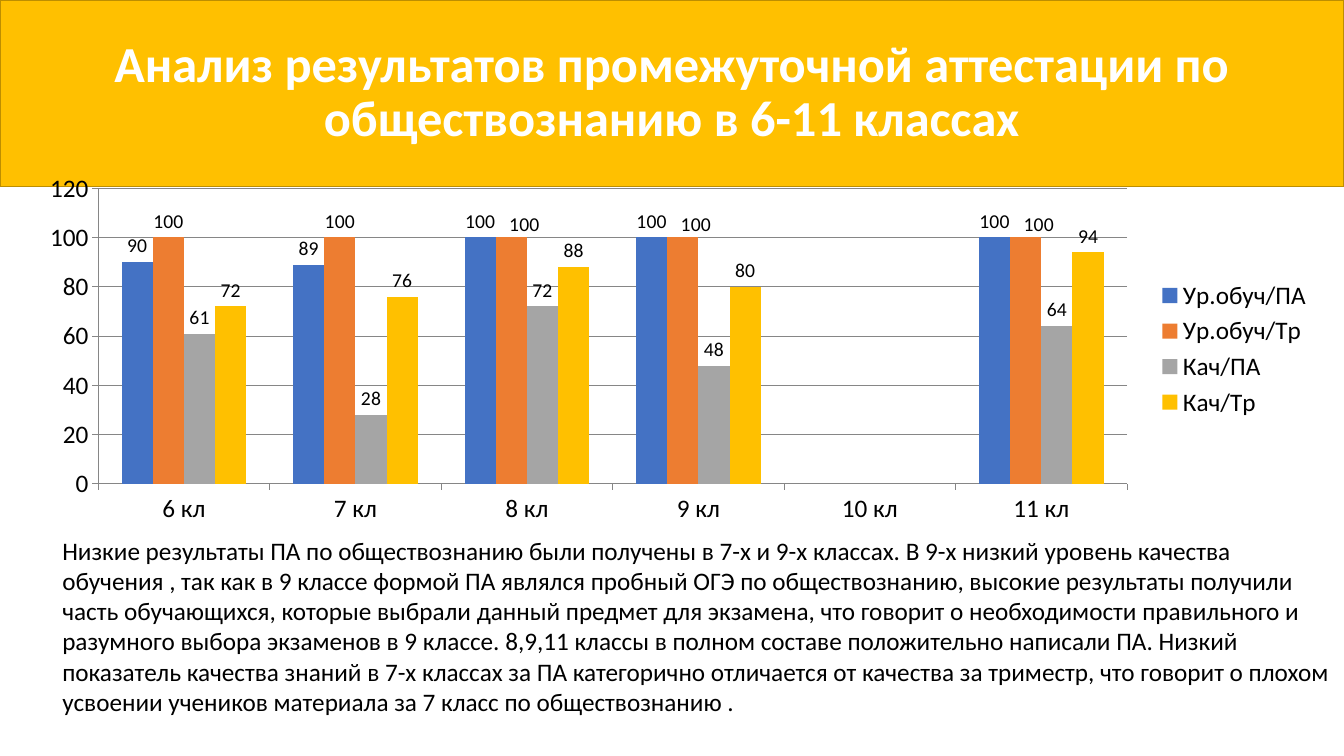
from lxml.etree import SubElement
from pptx import Presentation
from pptx.chart.data import CategoryChartData
from pptx.dml.color import RGBColor
from pptx.enum.chart import XL_CHART_TYPE, XL_LABEL_POSITION, XL_LEGEND_POSITION, XL_TICK_MARK
from pptx.enum.shapes import MSO_SHAPE
from pptx.enum.text import MSO_ANCHOR, PP_ALIGN
from pptx.oxml.ns import qn
from pptx.util import Inches, Pt

WIDE, HIGH = 13.33, 7.5
FACE = "Calibri"
BLACK = RGBColor(0x00, 0x00, 0x00)
WHITE = RGBColor(0xFF, 0xFF, 0xFF)
GOLD = RGBColor(0xFF, 0xC0, 0x00)
EDGE = RGBColor(0xBD, 0x8E, 0x00)
BLUE = RGBColor(0x44, 0x72, 0xC4)
ORANGE = RGBColor(0xED, 0x7D, 0x31)
GREY = RGBColor(0xA5, 0xA5, 0xA5)
RULE = RGBColor(0x86, 0x86, 0x86)

TITLE = "Анализ результатов промежуточной аттестации по обществознанию в 6-11 классах"
NOTE = (
    "Низкие результаты ПА по обществознанию были получены в 7-х и 9-х классах. "
    "В 9-х низкий уровень качества обучения , так как в 9 классе формой ПА являлся "
    "пробный ОГЭ по обществознанию, высокие результаты получили часть обучающихся, "
    "которые выбрали данный предмет для экзамена, что говорит о необходимости "
    "правильного и разумного выбора экзаменов в 9 классе. 8,9,11 классы в полном "
    "составе положительно написали ПА. Низкий показатель качества знаний в 7-х классах "
    "за ПА категорично отличается от качества за триместр, что говорит о плохом "
    "усвоении учеников материала за 7 класс по обществознанию ."
)
GRADES = [f"{grade} кл" for grade in range(6, 12)]
MARKS = [
    ("Ур.обуч/ПА", BLUE, (90, 89, 100, 100, None, 100)),
    ("Ур.обуч/Тр", ORANGE, (100, 100, 100, 100, None, 100)),
    ("Кач/ПА", GREY, (61, 28, 72, 48, None, 64)),
    ("Кач/Тр", GOLD, (72, 76, 88, 80, None, 94)),
]
# Labels moved aside from an equal neighbour, by point number
MOVED = {"Ур.обуч/Тр": (2, 3, 5)}


def style(font, size, color=BLACK, bold=False):
    font.name, font.size, font.bold = FACE, Pt(size), bold
    font.color.rgb = color


def write(frame, text, size=18, color=BLACK, bold=False, align=PP_ALIGN.LEFT,
          anchor=MSO_ANCHOR.TOP, space=1.0):
    frame.word_wrap = True
    frame.vertical_anchor = anchor
    line = frame.paragraphs[0]
    line.alignment, line.line_spacing = align, space
    run = line.add_run()
    run.text = text
    style(run.font, size, color, bold)


def place(node, index, **parts):
    """Give a chart element a manual layout as its child at index."""
    for old in node.findall(qn("c:layout")):
        node.remove(old)
    layout = SubElement(node, qn("c:layout"))
    manual = SubElement(layout, qn("c:manualLayout"))
    for name, value in parts.items():
        SubElement(manual, qn(f"c:{name}")).set("val", str(value))
    node.insert(index, layout)


def banner(slide, box):
    shape = slide.shapes.add_shape(MSO_SHAPE.RECTANGLE, *box)
    shape.shadow.inherit = False
    shape.fill.solid()
    shape.fill.fore_color.rgb = GOLD
    shape.line.color.rgb = EDGE
    shape.line.width = Pt(1)
    write(shape.text_frame, TITLE, size=36, color=WHITE, bold=True,
          align=PP_ALIGN.CENTER, anchor=MSO_ANCHOR.MIDDLE, space=0.9)


def paint(series, color):
    """Colour a series and label its columns."""
    series.format.fill.solid()
    series.format.fill.fore_color.rgb = color
    series.invert_if_negative = False
    labels = series.data_labels
    labels.show_value = True
    labels.position = XL_LABEL_POSITION.OUTSIDE_END
    style(labels.font, 14)
    for point in MOVED.get(series.name, ()):
        label = series.points[point].data_label
        label.position = XL_LABEL_POSITION.OUTSIDE_END
        style(label.font, 14)
    for node in labels._element.findall(qn("c:dLbl")):
        place(node, 1, x=0.01, y=0.01)


def graph(slide, box):
    data = CategoryChartData()
    data.categories = GRADES
    for name, _, values in MARKS:
        data.add_series(name, values)
    chart = slide.shapes.add_chart(XL_CHART_TYPE.COLUMN_CLUSTERED, *box, data).chart
    style(chart.font, 18)
    chart.has_title = False
    chart.has_legend = True
    chart.legend.position = XL_LEGEND_POSITION.RIGHT
    chart.legend.include_in_layout = False

    plot = chart.plots[0]
    plot.gap_width, plot.overlap, plot.vary_by_categories = 150, 0, False
    for series, (_, color, _) in zip(plot.series, MARKS):
        paint(series, color)

    scale = chart.value_axis
    scale.minimum_scale, scale.maximum_scale, scale.major_unit = 0, 120, 20
    scale.has_major_gridlines = True
    for axis in (chart.category_axis, scale):
        axis.major_tick_mark = XL_TICK_MARK.OUTSIDE
        axis.minor_tick_mark = XL_TICK_MARK.NONE
    for part in (chart.category_axis, scale, scale.major_gridlines):
        part.format.line.color.rgb = RULE
        part.format.line.width = Pt(0.75)

    area = chart.element.find(".//" + qn("c:plotArea"))
    place(area, 0, layoutTarget="inner", xMode="edge", yMode="edge",
          x=0.06, y=0.06, w=0.79, h=0.81)


def note(slide, box):
    write(slide.shapes.add_textbox(*box).text_frame, NOTE)


def share(left, top, width, height):
    """Turn shares of the slide into a box."""
    return [Inches(part * side) for part, side in
            zip((left, top, width, height), (WIDE, HIGH, WIDE, HIGH))]


def main():
    deck = Presentation()
    deck.slide_width, deck.slide_height = Inches(WIDE), Inches(HIGH)
    slide = deck.slides.add_slide(deck.slide_layouts[6])
    banner(slide, share(0, 0, 1, 0.247))
    graph(slide, share(0.015, 0.22, 0.969, 0.483))
    note(slide, share(0.039, 0.701, 0.961, 0.256))
    deck.save("out.pptx")


if __name__ == "__main__":
    main()
